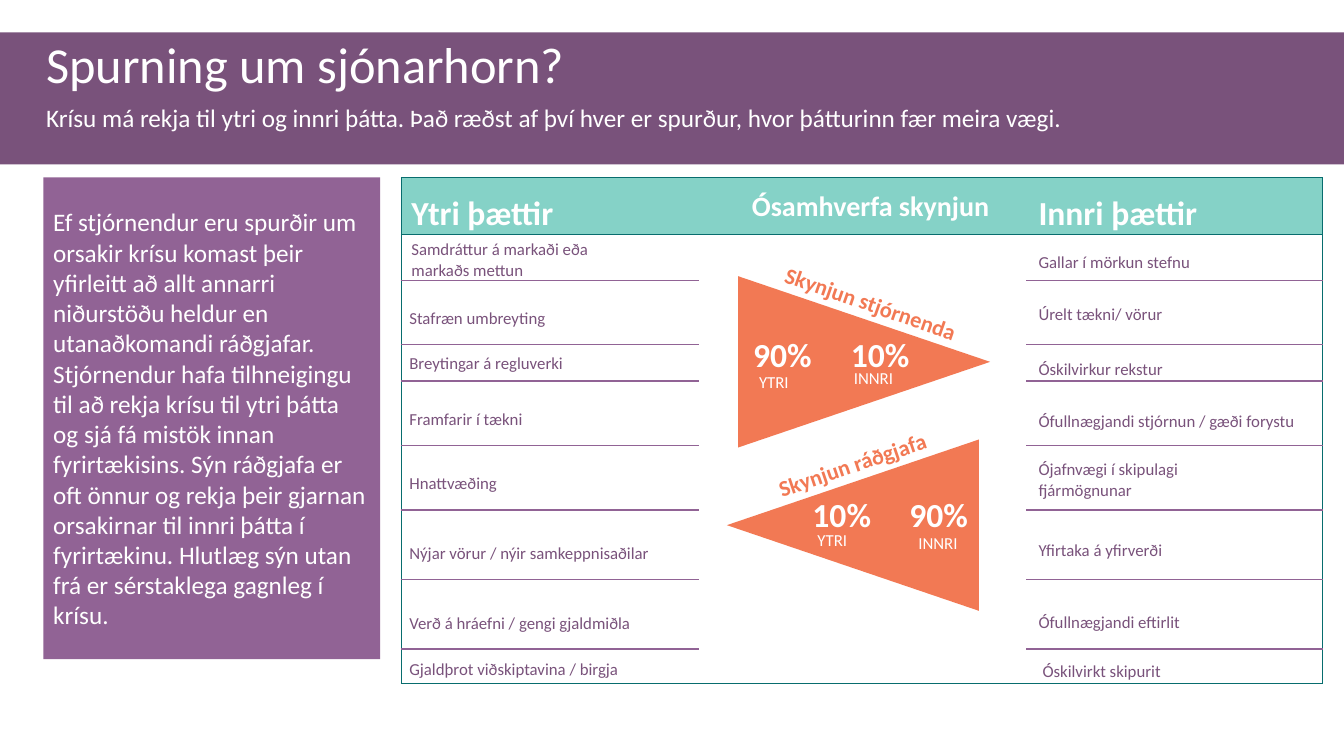
from lxml import etree
from pptx import Presentation
from pptx.dml.color import RGBColor
from pptx.enum.shapes import MSO_SHAPE
from pptx.enum.text import MSO_ANCHOR, MSO_AUTO_SIZE, PP_ALIGN
from pptx.oxml.ns import qn
from pptx.util import Inches, Pt

RECTANGLE, TRIANGLE = MSO_SHAPE.RECTANGLE, MSO_SHAPE.ISOSCELES_TRIANGLE
TOP, MIDDLE = MSO_ANCHOR.TOP, MSO_ANCHOR.MIDDLE
LEFT, CENTER = PP_ALIGN.LEFT, PP_ALIGN.CENTER
GROW = MSO_AUTO_SIZE.SHAPE_TO_FIT_TEXT

WHITE = RGBColor(0xFF, 0xFF, 0xFF)
PLUM = RGBColor(0x79, 0x52, 0x7B)
PURPLE = RGBColor(0x91, 0x63, 0x95)
MINT = RGBColor(0x85, 0xD2, 0xC7)
TEAL = RGBColor(0x08, 0x6D, 0x6E)
ORANGE = RGBColor(0xF2, 0x79, 0x54)

FONT = "Calibri"
COLUMN_WIDTHS = (2.95, 3.25, 2.94)
ROW_HEIGHTS = (0.56, 0.46, 0.64, 0.36, 0.64, 0.64, 0.69, 0.69, 0.34)
LAST_ROW = len(ROW_HEIGHTS) - 1
FRAME, RULE = (TEAL, 0.5), (PURPLE, 1)

# Header cells: text, size, top inset, indent, alignment
HEADERS = (
    ("Ytri þættir", 24, 0.16, 0.1, LEFT),
    ("Ósamhverfa skynjun", 20, 0.12, 0.16, CENTER),
    ("Innri þættir", 24, 0.16, 0.12, LEFT),
)
# Factors: text, top inset, indent, right inset
OUTER_FACTORS = (
    ("Samdráttur á markaði eða markaðs mettun", 0.06, 0.1, 1),
    ("Stafræn umbreyting", 0.12, 0.08, 0),
    ("Breytingar á regluverki", 0.01, 0.08, 0),
    ("Framfarir í tækni", 0.12, 0.08, 0),
    ("Hnattvæðing", 0.12, 0.08, 0),
    ("Nýjar vörur / nýir samkeppnisaðilar", 0.18, 0.08, 0),
    ("Verð á hráefni / gengi gjaldmiðla", 0.18, 0.08, 0),
    ("Gjaldþrot viðskiptavina / birgja", 0.08, 0.08, 0),
)
INNER_FACTORS = (
    ("Gallar í mörkun stefnu", 0.12, 0.12, 0),
    ("Úrelt tækni/ vörur", 0.04, 0.12, 0),
    ("Óskilvirkur rekstur", 0.14, 0.12, 0),
    ("Ófullnægjandi stjórnun / gæði forystu", 0.16, 0.12, 0),
    ("Ójafnvægi í skipulagi fjármögnunar", 0.05, 0.12, 1),
    ("Yfirtaka á yfirverði", 0.11, 0.12, 0),
    ("Ófullnægjandi eftirlit", 0.16, 0.12, 0),
    ("Óskilvirkt skipurit", 0.11, 0.16, 0),
)
ADVICE = (
    "Ef stjórnendur eru spurðir um orsakir krísu komast þeir yfirleitt að allt "
    "annarri niðurstöðu heldur en utanaðkomandi ráðgjafar. Stjórnendur hafa "
    "tilhneigingu til að rekja krísu til ytri þátta og sjá fá mistök innan "
    "fyrirtækisins. Sýn ráðgjafa er oft önnur og rekja þeir gjarnan orsakirnar "
    "til innri þátta í fyrirtækinu. Hlutlæg sýn utan frá er sérstaklega gagnleg "
    "í krísu."
)


def style(para, size, color, bold=False, align=LEFT):
    para.alignment = align
    para.font.name = FONT
    para.font.size = Pt(size)
    para.font.bold = bold
    para.font.color.rgb = color


def add_block(shapes, kind, place, color, rotation=0):
    block = shapes.add_shape(kind, *map(Inches, place))
    block.shadow.inherit = False
    block.fill.solid()
    block.fill.fore_color.rgb = color
    block.line.fill.background()
    block.rotation = rotation
    return block


def add_text(shapes, place, text, size, color=WHITE, bold=False, rotation=0, wrap=False):
    box = shapes.add_textbox(*map(Inches, place))
    box.rotation = rotation
    frame = box.text_frame
    frame.word_wrap = wrap
    if not wrap:
        frame.auto_size = GROW
    para = frame.paragraphs[0]
    para.text = text
    style(para, size, color, bold)
    return para


def set_borders(cell, left=None, right=None, top=None, bottom=None):
    properties = cell._tc.get_or_add_tcPr()
    sides = zip(("a:lnL", "a:lnR", "a:lnT", "a:lnB"), (left, right, top, bottom))
    for position, (tag, border) in enumerate(sides):
        line = etree.Element(qn(tag))
        properties.insert(position, line)
        if border is None:
            etree.SubElement(line, qn("a:noFill"))
        else:
            color, width = border
            line.set("w", str(Pt(width)))
            fill = etree.SubElement(line, qn("a:solidFill"))
            etree.SubElement(fill, qn("a:srgbClr"), val=str(color))


def fill_cell(cell, text, size, color, inset, indent, right=0, bold=False,
              align=LEFT, anchor=MIDDLE):
    cell.margin_left = cell.margin_bottom = 0
    cell.margin_top, cell.margin_right = Inches(inset), Inches(right)
    cell.vertical_anchor = anchor
    para = cell.text_frame.paragraphs[0]
    para.text = text
    para._p.get_or_add_pPr().set("marL", str(Inches(indent)))
    style(para, size, color, bold, align)


def add_factor_table(page):
    table = page.shapes.add_table(
        len(ROW_HEIGHTS), len(COLUMN_WIDTHS),
        Inches(3.98), Inches(1.76), Inches(9.14), Inches(5.02)).table
    for column, width in zip(table.columns, COLUMN_WIDTHS):
        column.width = Inches(width)
    for row, height in zip(table.rows, ROW_HEIGHTS):
        row.height = Inches(height)
    table.cell(1, 1).merge(table.cell(LAST_ROW, 1))

    # Fills and rules
    for row in range(len(ROW_HEIGHTS)):
        for column in range(len(COLUMN_WIDTHS)):
            cell = table.cell(row, column)
            if row == 0:
                cell.fill.solid()
                cell.fill.fore_color.rgb = MINT
            else:
                cell.fill.background()
            inside = None if column == 1 else RULE
            closes = row in (0, LAST_ROW) or cell.is_merge_origin
            set_borders(cell,
                        left=FRAME if column == 0 else None,
                        right=FRAME if column == 2 else None,
                        top=FRAME if row <= 1 else inside,
                        bottom=FRAME if closes else inside)

    # Wording
    for column, (text, size, inset, indent, align) in enumerate(HEADERS):
        fill_cell(table.cell(0, column), text, size, WHITE, inset, indent,
                  bold=True, align=align, anchor=TOP)
    for column, factors in ((0, OUTER_FACTORS), (2, INNER_FACTORS)):
        for row, (text, inset, indent, right) in enumerate(factors, start=1):
            fill_cell(table.cell(row, column), text, 12, PLUM, inset, indent, right)


def add_header_patch(page):
    table = page.shapes.add_table(
        1, 1, Inches(10.06), Inches(1.77), Inches(0.23), Inches(0.4)).table
    cell = table.cell(0, 0)
    cell.fill.background()
    edge = (MINT, 1)
    set_borders(cell, edge, edge, edge, edge)


def add_view(page, triangle, rotation, shares, labels):
    group = page.shapes.add_group_shape().shapes
    add_block(group, TRIANGLE, (*triangle, 1.7, 2.5), ORANGE, rotation)
    for text, left, top in shares:
        add_text(group, (left, top, 0.79, 0.5), text, 24, bold=True)
    for text, left, top, width in labels:
        add_text(group, (left, top, width, 0.3), text, 12)


def main():
    deck = Presentation()
    deck.slide_width, deck.slide_height = Inches(13.33), Inches(7.5)
    page = deck.slides.add_slide(deck.slide_layouts[6])
    shapes = page.shapes

    # Title band
    add_block(shapes, RECTANGLE, (0, 0.32, 13.33, 1.31), PLUM)
    for text, top, size in (
        ("Spurning um sjónarhorn?", 0.35, 36),
        ("Krísu má rekja til ytri og innri þátta. Það ræðst af því hver er spurður, "
         "hvor þátturinn fær meira vægi.", 1, 18),
    ):
        para = add_text(shapes, (0.36, top, 12.54, 0.64), text, size, wrap=True)
        para.line_spacing = 0.9

    # Explanation panel
    panel = add_block(shapes, RECTANGLE, (0.43, 1.76, 3.34, 4.78), PURPLE)
    panel.text_frame.word_wrap = True
    panel.text_frame.vertical_anchor = MIDDLE
    para = panel.text_frame.paragraphs[0]
    para.text = ADVICE
    style(para, 18, WHITE)

    # Factors
    add_factor_table(page)
    add_header_patch(page)

    # Managers' and advisers' views
    add_text(shapes, (7.65, 2.83, 2, 0.37), "Skynjun stjórnenda", 16, ORANGE, True, 19.3)
    add_text(shapes, (7.59, 4.42, 1.75, 0.37), "Skynjun ráðgjafa", 16, ORANGE, True, 341.2)
    add_view(page, (7.72, 2.34), 90,
             (("90%", 7.37, 3.26), ("10%", 8.34, 3.26)),
             (("YTRI", 7.43, 3.64, 0.5), ("INNRI", 8.37, 3.6, 0.59)))
    add_view(page, (7.61, 3.96), 270,
             (("10%", 7.96, 4.85), ("90%", 8.92, 4.85)),
             (("YTRI", 8.01, 5.21, 0.5), ("INNRI", 9.01, 5.24, 0.59)))

    deck.save("out.pptx")


if __name__ == "__main__":
    main()
